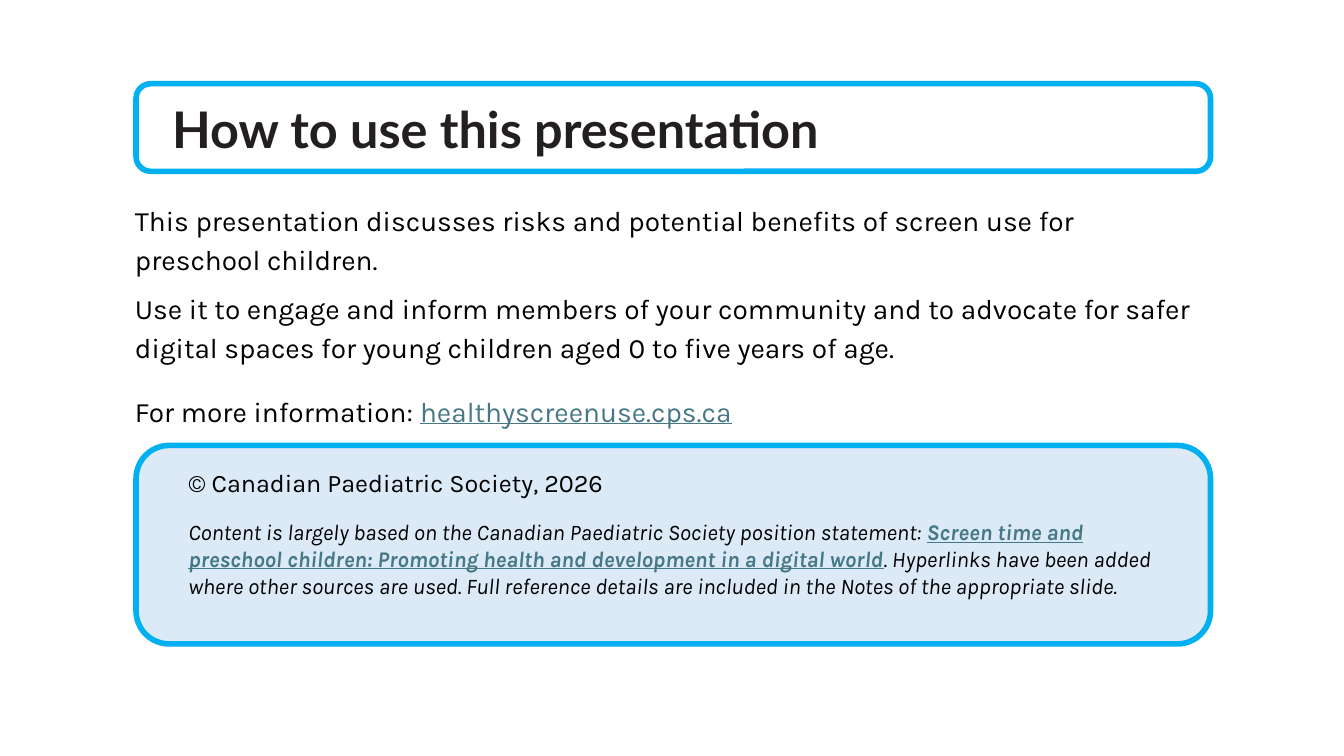
"""Build the slide that explains how to use the screen time presentation."""
from pptx import Presentation
from pptx.dml.color import RGBColor
from pptx.enum.shapes import MSO_SHAPE
from pptx.util import Pt

ROUNDED = MSO_SHAPE.ROUNDED_RECTANGLE
BLACK = RGBColor(0x00, 0x00, 0x00)
CHARCOAL = RGBColor(0x23, 0x1F, 0x20)
TEAL = RGBColor(0x46, 0x78, 0x86)
SKY = RGBColor(0x00, 0xB0, 0xF0)
PALE_BLUE = RGBColor(0xDC, 0xEA, 0xF7)

deck = Presentation()
deck.slide_width, deck.slide_height = Pt(960), Pt(540)
slide = deck.slides.add_slide(deck.slide_layouts[6])


def add_text(paragraphs, left, top, width, height, size, font="Karla", color=BLACK,
             bold=False, italic=False, link_bold=False, line_spacing=1.0, space_after=0):
    """Add a text box; every second run of a paragraph is styled as a link."""
    box = slide.shapes.add_textbox(Pt(left), Pt(top), Pt(width), Pt(height))
    frame = box.text_frame
    frame.word_wrap = True
    for index, runs in enumerate(paragraphs):
        paragraph = frame.add_paragraph() if index else frame.paragraphs[0]
        paragraph.line_spacing = line_spacing
        paragraph.space_after = Pt(space_after)
        for position, words in enumerate(runs):
            is_link = position % 2 == 1
            run = paragraph.add_run()
            run.text = words
            run.font.name = font
            run.font.size = Pt(size)
            run.font.bold = link_bold if is_link else bold
            run.font.italic = italic
            run.font.underline = is_link
            run.font.color.rgb = TEAL if is_link else color


for top, height, fill in [(59.8, 62.6, None), (318.2, 141.8, PALE_BLUE)]:
    panel = slide.shapes.add_shape(ROUNDED, Pt(97.2), Pt(top), Pt(767.5), Pt(height))
    panel.shadow.inherit = False
    panel.line.color.rgb = SKY
    panel.line.width = Pt(4)
    if fill is None:
        panel.fill.background()
    else:
        panel.fill.solid()
        panel.fill.fore_color.rgb = fill

add_text([["How to use this presentation"]], 115.9, 66.2, 735.8, 51.1,
         size=36, font="Lato", color=CHARCOAL, bold=True)

add_text([["This presentation discusses risks and potential benefits of screen use for "
           "preschool children."],
          ["Use it to engage and inform members of your community and to advocate for safer "
           "digital spaces for young children aged 0 to five years of age."]],
         89.3, 138.2, 776.9, 125.3, size=20, line_spacing=1.15, space_after=8)

add_text([["For more information: ", "healthyscreenuse.cps.ca"]],
         89.3, 274.3, 767.5, 33.8, size=20, line_spacing=1.15, space_after=8)

add_text([["© Canadian Paediatric Society, 2026"]],
         127.4, 326.9, 735.8, 31, size=18, line_spacing=1.15, space_after=8)

add_text([["Content is largely based on the Canadian Paediatric Society position statement: ",
           "Screen time and preschool children: Promoting health and development "
           "in a digital world",
           ". Hyperlinks have been added where other sources are used. Full reference details "
           "are included in the Notes of the appropriate slide."]],
         127.4, 366.5, 711.4, 85, size=16, italic=True, link_bold=True)

deck.save("out.pptx")
